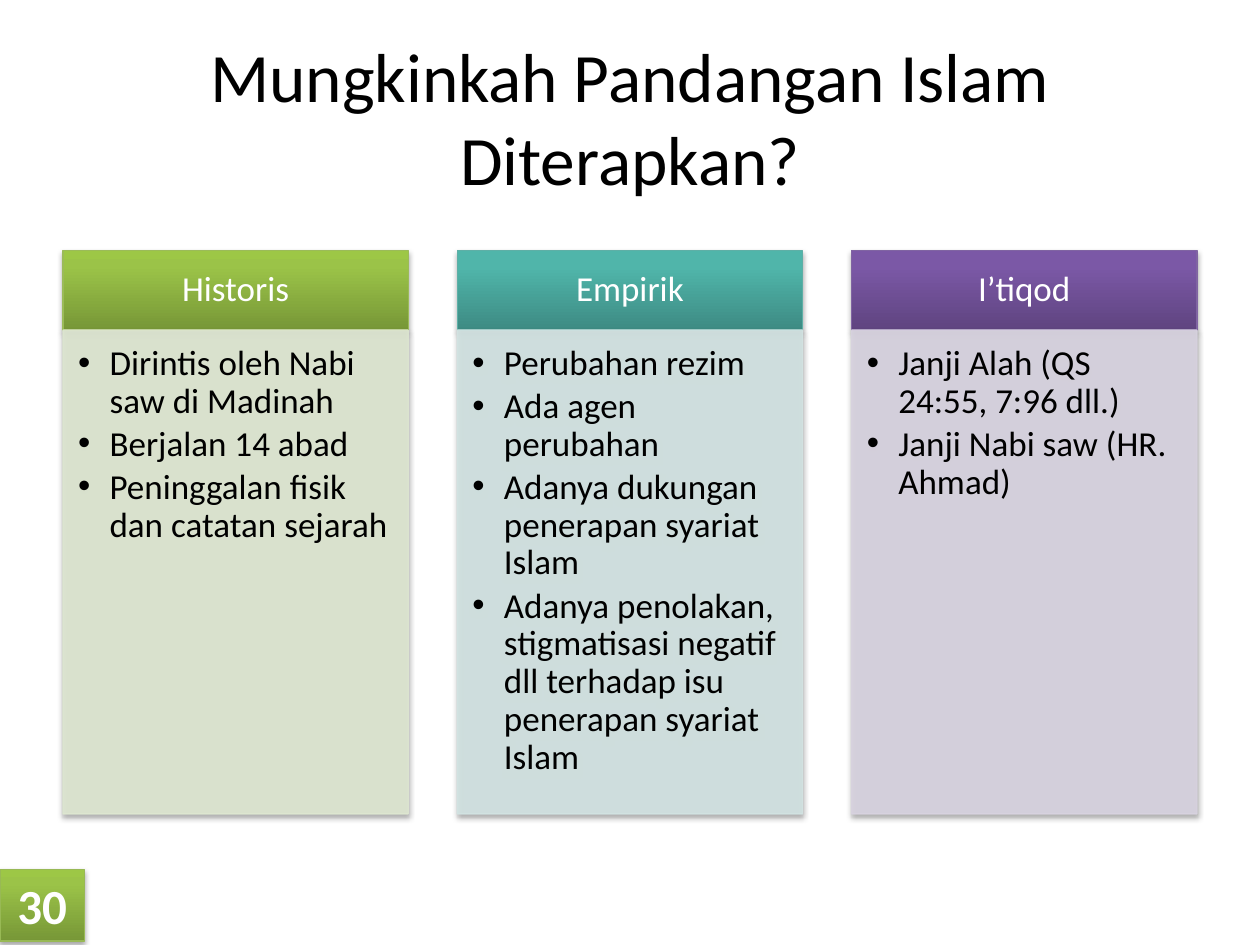
import pptx
import pptx.dml.color
import pptx.enum.shapes
import pptx.enum.text
import pptx.oxml
import pptx.oxml.ns
import pptx.util

RGBColor = pptx.dml.color.RGBColor
Inches = pptx.util.Inches
Pt = pptx.util.Pt
PP_ALIGN = pptx.enum.text.PP_ALIGN
MSO_ANCHOR = pptx.enum.text.MSO_ANCHOR

BLACK = RGBColor(0x00, 0x00, 0x00)
WHITE = RGBColor(0xFF, 0xFF, 0xFF)
GREEN_GRADIENT = (
    RGBColor(0x77, 0x97, 0x37), RGBColor(0x9B, 0xC3, 0x48), RGBColor(0x9D, 0xC7, 0x46))
TEAL_GRADIENT = (
    RGBColor(0x3D, 0x8B, 0x83), RGBColor(0x50, 0xB5, 0xAA), RGBColor(0x4E, 0xB8, 0xAC))
PURPLE_GRADIENT = (
    RGBColor(0x5F, 0x44, 0x80), RGBColor(0x7B, 0x58, 0xA6), RGBColor(0x7C, 0x57, 0xA8))
GREEN_LINE = RGBColor(0x9B, 0xBB, 0x59)
TEAL_LINE = RGBColor(0x5E, 0xAF, 0xA6)
PURPLE_LINE = RGBColor(0x80, 0x64, 0xA2)
BADGE_LINE = RGBColor(0x98, 0xB9, 0x55)
GREEN_TINT = RGBColor(0xDE, 0xE7, 0xD1)
TEAL_TINT = RGBColor(0xD2, 0xE3, 0xE2)
PURPLE_TINT = RGBColor(0xD8, 0xD3, 0xE0)

FONT = "Calibri"
MARGIN = 0.5
COLUMN_WIDTH = 2.74
COLUMN_PITCH = (10 - 2 * MARGIN - COLUMN_WIDTH) / 2
HEADER_TOP = 1.99
HEADER_HEIGHT = 0.63
BODY_HEIGHT = 3.84

COLUMNS = [
    ("Historis", GREEN_GRADIENT, GREEN_LINE, GREEN_TINT, [
        "Dirintis oleh Nabi saw di Madinah",
        "Berjalan 14 abad",
        "Peninggalan fisik dan catatan sejarah"]),
    ("Empirik", TEAL_GRADIENT, TEAL_LINE, TEAL_TINT, [
        "Perubahan rezim",
        "Ada agen perubahan",
        "Adanya dukungan penerapan syariat Islam",
        "Adanya penolakan, stigmatisasi negatif dll terhadap isu penerapan syariat Islam"]),
    ("I’tiqod", PURPLE_GRADIENT, PURPLE_LINE, PURPLE_TINT, [
        "Janji Alah (QS 24:55, 7:96 dll.)",
        "Janji Nabi saw (HR. Ahmad)"]),
]


def append_xml(parent, xml):
    tag_end = xml.index(">")
    namespace = " " + pptx.oxml.ns.nsdecls("a")
    parent.append(pptx.oxml.parse_xml(xml[:tag_end] + namespace + xml[tag_end:]))


def add_box(slide, left, top, width, height):
    shape = slide.shapes.add_shape(
        pptx.enum.shapes.MSO_SHAPE.RECTANGLE,
        Inches(left), Inches(top), Inches(width), Inches(height))
    shape.text_frame.word_wrap = True
    return shape


def set_line(shape, color):
    shape.line.color.rgb = color
    shape.line.width = Pt(0.75)


def add_shadow(shape):
    append_xml(
        shape.element.spPr,
        '<a:effectLst><a:outerShdw blurRad="40000" dist="23000" dir="5400000" rotWithShape="0">'
        '<a:srgbClr val="000000"><a:alpha val="35000"/></a:srgbClr>'
        '</a:outerShdw></a:effectLst>')


def paint_gradient(shape, colors, line_color):
    stops = "".join(
        f'<a:gs pos="{position}"><a:srgbClr val="{color}"/></a:gs>'
        for position, color in zip((0, 80000, 100000), colors))
    append_xml(
        shape.element.spPr,
        f'<a:gradFill><a:gsLst>{stops}</a:gsLst>'
        '<a:lin ang="16200000" scaled="0"/></a:gradFill>')
    set_line(shape, line_color)
    add_shadow(shape)


def paint_tint(shape, color):
    shape.fill.solid()
    shape.fill.fore_color.rgb = color
    set_line(shape, color)
    for color_element in shape.element.spPr.xpath(".//a:srgbClr"):
        append_xml(color_element, '<a:alpha val="90000"></a:alpha>')
    add_shadow(shape)


def set_insets(frame, left, top, right, bottom):
    frame.margin_left = Inches(left)
    frame.margin_top = Inches(top)
    frame.margin_right = Inches(right)
    frame.margin_bottom = Inches(bottom)


def add_run(paragraph, text, size, color, bold=False):
    run = paragraph.add_run()
    run.text = text
    run.font.name = FONT
    run.font.size = Pt(size)
    run.font.color.rgb = color
    run.font.bold = bold


def write_centered(frame, text, size, color, bold=False):
    frame.vertical_anchor = MSO_ANCHOR.MIDDLE
    paragraph = frame.paragraphs[0]
    paragraph.alignment = PP_ALIGN.CENTER
    add_run(paragraph, text, size, color, bold)
    return paragraph


def write_bullets(frame, items):
    frame.vertical_anchor = MSO_ANCHOR.TOP
    for index, item in enumerate(items):
        paragraph = frame.add_paragraph() if index else frame.paragraphs[0]
        paragraph.alignment = PP_ALIGN.LEFT
        paragraph.line_spacing = 0.9
        paragraph.space_after = Pt(3)
        properties = paragraph._p.get_or_add_pPr()
        properties.set("marL", str(Inches(0.25)))
        properties.set("indent", str(Inches(-0.25)))
        append_xml(properties, '<a:buFont typeface="Arial"></a:buFont>')
        append_xml(properties, '<a:buChar char="•"></a:buChar>')
        add_run(paragraph, item, 20, BLACK)


def add_title(slide, text):
    title = slide.shapes.title
    title.left, title.top = Inches(MARGIN), Inches(0.3)
    title.width, title.height = Inches(10 - 2 * MARGIN), Inches(1.25)
    title.text_frame.auto_size = pptx.enum.text.MSO_AUTO_SIZE.NONE
    write_centered(title.text_frame, text, 39.6, BLACK)


def add_column(slide, left, heading, gradient, line_color, tint, items):
    header = add_box(slide, left, HEADER_TOP, COLUMN_WIDTH, HEADER_HEIGHT)
    paint_gradient(header, gradient, line_color)
    set_insets(header.text_frame, 0.16, 0.09, 0.16, 0.09)
    write_centered(header.text_frame, heading, 20, WHITE).line_spacing = 0.9

    body = add_box(slide, left, HEADER_TOP + HEADER_HEIGHT, COLUMN_WIDTH, BODY_HEIGHT)
    paint_tint(body, tint)
    set_insets(body.text_frame, 0.12, 0.12, 0.16, 0.17)
    write_bullets(body.text_frame, items)


def add_page_badge(slide, number):
    badge = add_box(slide, 0, 6.9, 0.67, 0.57)
    paint_gradient(badge, GREEN_GRADIENT, BADGE_LINE)
    write_centered(badge.text_frame, number, 28, WHITE, bold=True)


def main():
    presentation = pptx.Presentation()
    presentation.slide_width = Inches(10)
    presentation.slide_height = Inches(7.5)
    slide = presentation.slides.add_slide(presentation.slide_layouts[5])
    add_title(slide, "Mungkinkah Pandangan Islam Diterapkan?")
    for index, column in enumerate(COLUMNS):
        add_column(slide, MARGIN + index * COLUMN_PITCH, *column)
    add_page_badge(slide, "30")
    presentation.save("out.pptx")


if __name__ == "__main__":
    main()
